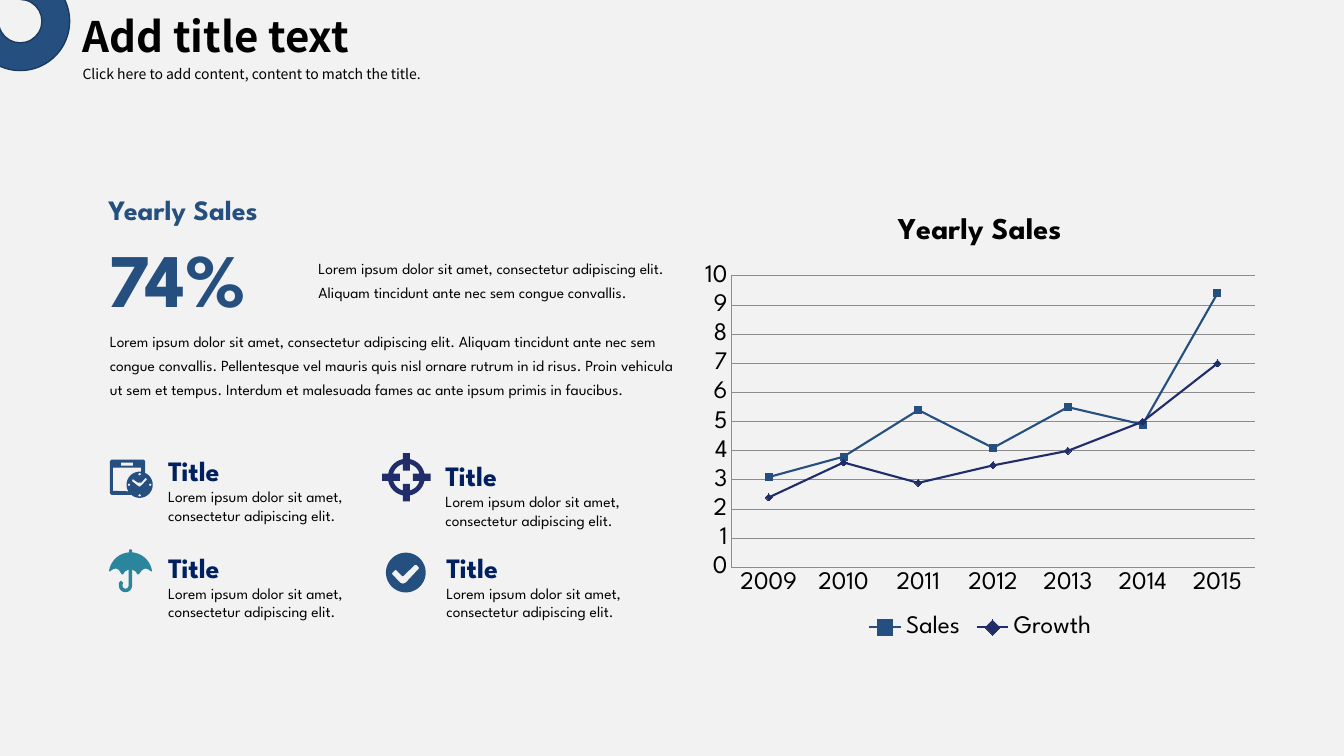
from math import cos, radians, sin

from lxml.etree import SubElement
from pptx import Presentation
from pptx.chart.data import CategoryChartData
from pptx.dml.color import RGBColor
from pptx.enum.chart import XL_CHART_TYPE, XL_LEGEND_POSITION, XL_MARKER_STYLE, XL_TICK_MARK
from pptx.enum.shapes import MSO_SHAPE
from pptx.enum.text import MSO_AUTO_SIZE
from pptx.oxml.ns import qn
from pptx.util import Inches, Pt

COLORS = {"back": "F2F2F2", "ink": "000000", "blue": "254F7F", "edge": "1B3A5E",
          "navy": "002060", "deep": "212C6A", "teal": "2B859C", "grid": "8C8C8C"}
SPARTAN, NOTO = "League Spartan", "Noto Sans CJK SC"


def arc(x, y, size, start, end, steps=24):
    turns = [radians(start + (end - start) * i / steps) for i in range(steps + 1)]
    return [(x + size * cos(t), y + size * sin(t)) for t in turns]


def box(x, y, w, h):
    return [(x, y), (x + w, y), (x + w, y + h), (x, y + h)]


def clock():
    x, y = 29.5, 25
    rim = [(35, 14), (35, 1.5), (33.5, 0), (1.5, 0), (0, 1.5), (0, 33.5), (1.5, 35), (22, 35)]
    pane = [(3, 8), (31, 8), (31, 12)] + arc(x, y, 13, -82, -210) + [(3, 31)]
    hands = [(37, 19.5), (32, 25), (29.5, 27), (27, 25.5), (22, 21.5), (22, 20),
             (23, 19.5), (28, 23), (31, 23), (35.5, 18)]
    dots = [arc(x + 10.5 * cos(radians(t)), y + 10.5 * sin(radians(t)), 1.2, 0, 360)
            for t in range(0, 360, 90)]
    return [rim + arc(x, y, 13, 125, -62), box(11, 3, 12, 3), pane, hands] + dots


def cross():
    def ring(tip, size, gap):
        pts = []
        for t in range(0, 360, 90):
            c, s = cos(radians(t)), sin(radians(t))
            pts += [(tip * c - w * s, tip * s + w * c) for w in (-3.5, 3.5)]
            pts += arc(0, 0, size, t + gap, t + 90 - gap)
        return pts
    return [ring(24, 18.3, 11), ring(6.5, 13.5, 15)]


def brolly():
    dome = arc(21.5, 24.5, 21.5, 188, 266) + [(20, 0.5), (21.5, 0), (23, 0.5)]
    dome += arc(21.5, 24.5, 21.5, 274, 352)
    right = [(42, 22), (39, 19.8), (36, 19), (33, 20.5), (30, 24.5), (28.5, 25), (26.5, 22), (23, 20)]
    hook = arc(16.5, 36, 6.5, 0, 180) + [(10, 33), (12, 31), (14, 33)] + arc(16.5, 36, 3, 180, 0)
    left = [(19.5, 20), (16, 22), (14, 25), (12.5, 24.5), (10, 20.5), (7, 19), (4, 19.8), (1, 22)]
    return [dome + right + hook + left]


def tick():
    mark = [(13.5, -4.5), (10.5, -7.7), (9, -7.7), (-2.5, 3.5), (-3.5, 3.5), (-9.5, -2.5),
            (-10.5, -2.5), (-13.5, 0.5), (-13.5, 1.8), (-5, 10.5), (-2.5, 11), (0, 10)]
    return [arc(0, 0, 19.7, 0, 360, 60), mark]


class Deck:
    """Holds the style and current slide on a grid of tenth-inch columns and rows."""

    def __init__(self):
        self.prs = Presentation()
        self.prs.slide_width, self.prs.slide_height = Inches(13.33), Inches(7.5)
        self.cell = Inches(0.1)
        self.slide = self.prs.slides.add_slide(self.prs.slide_layouts[6])
        self.paint(self.slide.background.fill, "back")

    def span(self, *cells):
        return [round(c * self.cell) for c in cells]

    def paint(self, fill, color):
        fill.solid()
        fill.fore_color.rgb = RGBColor.from_string(COLORS[color])

    def style(self, font, size, color="ink", bold=False, face=SPARTAN):
        font.name, font.size, font.bold = face, Pt(size), bold
        font.color.rgb = RGBColor.from_string(COLORS[color])

    def text(self, place, words, size, color="ink", bold=False, face=SPARTAN, wrap=True, lead=1):
        frame = self.slide.shapes.add_textbox(*self.span(*place)).text_frame
        frame.word_wrap, frame.auto_size = wrap, MSO_AUTO_SIZE.SHAPE_TO_FIT_TEXT
        para = frame.paragraphs[0]
        para.line_spacing = lead
        run = para.add_run()
        run.text = words
        self.style(run.font, size, color, bold, face)

    def ring(self, place, tune):
        form = self.slide.shapes.add_shape(MSO_SHAPE.BLOCK_ARC, *self.span(*place))
        form.shadow.inherit = False
        form.rotation = 90
        for i, value in enumerate(tune):
            form.adjustments[i] = value
        self.paint(form.fill, "blue")
        self.paint(form.line.fill, "edge")
        form.line.width = Pt(1)

    def icon(self, x, y, loops, color):
        loops = [[self.span(x + a / 10, y + b / 10) for a, b in loop] for loop in loops]
        pen = self.slide.shapes.build_freeform(*loops[0][0])
        for i, loop in enumerate(loops):
            if i:
                pen.move_to(*loop[0])
            pen.add_line_segments(loop[1:], close=True)
        form = pen.convert_to_shape()
        form.shadow.inherit = False
        self.paint(form.fill, color)
        form.line.fill.background()

    def chart(self, place, title, cats, rows):
        data = CategoryChartData()
        data.categories = cats
        for name, vals, *_ in rows:
            data.add_series(name, vals)
        chart = self.slide.shapes.add_chart(
            XL_CHART_TYPE.LINE_MARKERS, *self.span(*place), data).chart
        self.style(chart.font, 18)
        chart.has_title = True
        run = chart.chart_title.text_frame.paragraphs[0].add_run()
        run.text = title
        self.style(run.font, 21.6, bold=True)
        chart.chart_title.include_in_layout = False
        chart.has_legend = True
        chart.legend.position = XL_LEGEND_POSITION.BOTTOM
        chart.legend.include_in_layout = False
        axes = chart.category_axis, chart.value_axis
        for axis in axes:
            axis.major_tick_mark = axis.minor_tick_mark = XL_TICK_MARK.NONE
        axes[1].has_major_gridlines = True
        axes[1].minimum_scale, axes[1].maximum_scale, axes[1].major_unit = 0, 10, 1
        for line in (axes[0].format.line, axes[1].format.line, axes[1].major_gridlines.format.line):
            self.paint(line.fill, "grid")
            line.width = Pt(0.75)
        plot = chart.plots[0]
        plot.vary_by_categories = False
        for row, (_, _, color, mark) in zip(plot.series, rows):
            row.smooth = False
            self.paint(row.format.line.fill, color)
            row.format.line.width = Pt(1.5)
            row.marker.style, row.marker.size = mark, 5
            self.paint(row.marker.format.fill, color)
            self.paint(row.marker.format.line.fill, color)
        for props in chart.element.iter(qn("c:spPr")):
            if props.find(qn("a:effectLst")) is None:
                SubElement(props, qn("a:effectLst"))


def main():
    deck = Deck()
    deck.text((7.2, 0.6, 35.1, 6.1), "Add title text", 30, bold=True, face=NOTO)
    deck.text((7.2, 5.2, 43.1, 3.2), "Click here to add content, content to match the title.",
              10, face=NOTO, lead=1.5)
    deck.ring((-2.9, -2.8, 9.8, 9.8), (108, 46, 0.28))
    deck.chart((68.8, 19.4, 56.8, 44.5), "Yearly Sales", [str(y) for y in range(2009, 2016)], [
        ("Sales", (3.1, 3.8, 5.4, 4.1, 5.5, 4.9, 9.4), "blue", XL_MARKER_STYLE.SQUARE),
        ("Growth", (2.4, 3.6, 2.9, 3.5, 4, 5, 7), "deep", XL_MARKER_STYLE.DIAMOND)])

    lorem = "Lorem ipsum dolor sit amet, consectetur adipiscing elit."
    more = lorem + " Aliquam tincidunt ante nec sem congue convallis."
    full = more + (" Pellentesque vel mauris quis nisl ornare rutrum in id risus. Proin vehicula ut sem"
                   " et tempus. Interdum et malesuada fames ac ante ipsum primis in faucibus.")
    deck.text((9.9, 31.9, 58.1, 10.6), full, 11, lead=1.3)
    deck.text((9.8, 18.6, 19.1, 4.4), "Yearly Sales", 20, "blue", True, wrap=False)
    deck.text((30.6, 24.7, 37.3, 8.2), more, 11, lead=1.3)
    deck.text((9.8, 22.5, 17.5, 10.1), "74%", 54, "blue", True, wrap=False)

    items = [(15.7, 44.5, 10.9, 45.6, clock(), "blue"), (43.2, 45, 40.3, 47.35, cross(), "deep"),
             (15.7, 54.1, 10.8, 54.5, brolly(), "teal"), (43.3, 54.1, 40.25, 56.8, tick(), "blue")]
    for x, y, left, top, loops, color in items:
        deck.text((x, y, 8.6, 4.4), "Title", 20, "navy", True, wrap=False)
        deck.text((x, y + 3.35, 24.5, 4.7), lorem, 11)
        deck.icon(left, top, loops, color)
    deck.prs.save("out.pptx")


if __name__ == "__main__":
    main()
